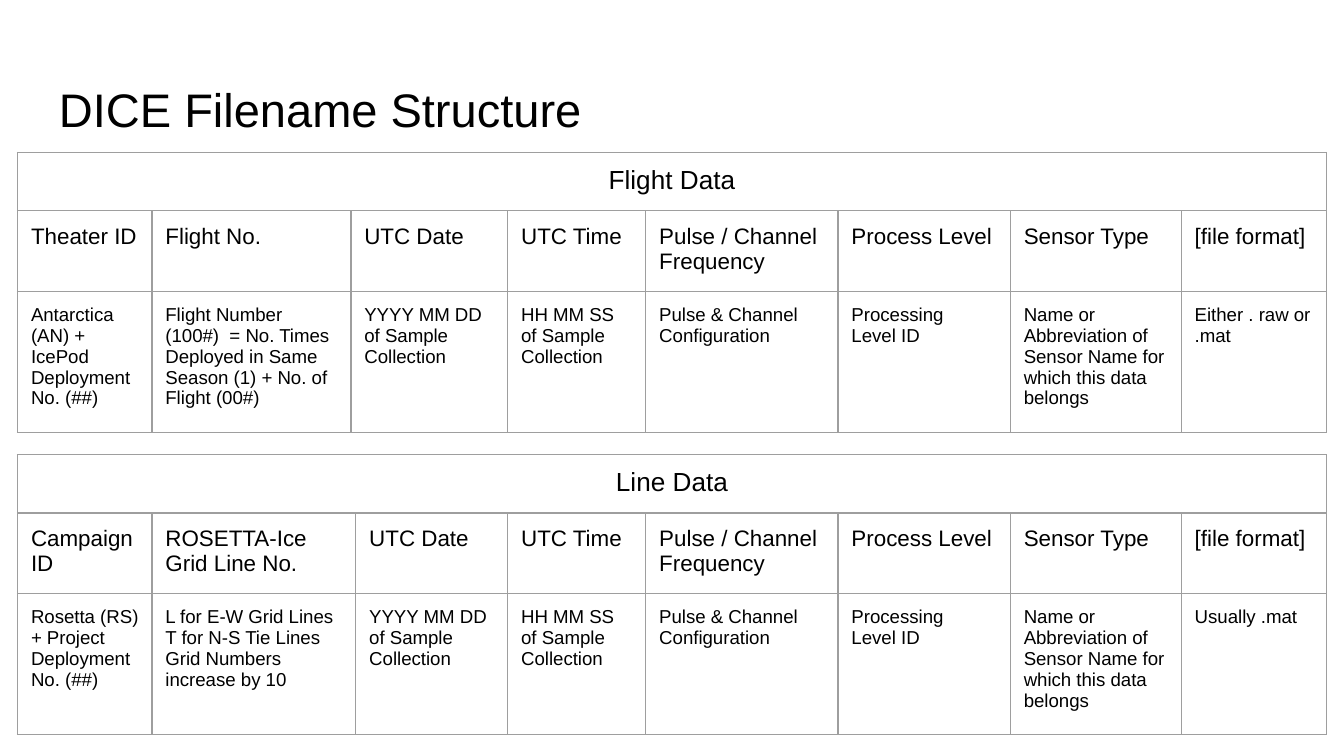
from dataclasses import dataclass

from lxml.etree import SubElement
from pptx import Presentation
from pptx.dml.color import RGBColor
from pptx.enum.text import MSO_ANCHOR, PP_ALIGN
from pptx.oxml.ns import qn
from pptx.util import Pt

FONT, INK, RULE = "Arial", "000000", "9E9E9E"
INSET = 7.2
TABLE_LEFT = 9.4
ROW_HEIGHTS = (30.5, 42.5, 75.5)
FIRST_WIDTH = 72
LAST_WIDTHS = (74, 103, 92.3, 91.6, 77.8)


@dataclass
class Field:
    name: str
    detail: str


@dataclass
class FileTable:
    title: str
    top: float
    number_width: float
    date_width: float
    fields: list[Field]


# Fields that both filename patterns share
UTC_DATE = Field("UTC Date", "YYYY MM DD of Sample Collection")
SHARED = [
    Field("UTC Time", "HH MM SS of Sample Collection"),
    Field("Pulse / Channel Frequency", "Pulse & Channel Configuration"),
    Field("Process Level", "Processing\nLevel ID"),
    Field("Sensor Type", "Name or Abbreviation of Sensor Name for which this data belongs"),
]

TABLES = [
    FileTable("Flight Data", 81.6, 106.6, 84, [
        Field("Theater ID", "Antarctica (AN) + IcePod Deployment No. (##)"),
        Field("Flight No.", "Flight Number (100#)  = No. Times Deployed in Same "
                            "Season (1) + No. of Flight (00#)"),
        UTC_DATE, *SHARED,
        Field("[file format]", "Either . raw or .mat"),
    ]),
    FileTable("Line Data", 243.6, 109.2, 81.4, [
        Field("Campaign ID", "Rosetta (RS) + Project Deployment No. (##)"),
        Field("ROSETTA-Ice Grid Line No.", "L for E-W Grid Lines\nT for N-S Tie Lines\n"
                                           "Grid Numbers increase by 10"),
        UTC_DATE, *SHARED,
        Field("[file format]", "Usually .mat"),
    ]),
]


def rgb(value: str) -> RGBColor:
    return RGBColor.from_string(value)


def write(tf, text: str, *, size: float, align=PP_ALIGN.LEFT, color: str = INK) -> None:
    tf.word_wrap = True
    tf.margin_left = tf.margin_right = tf.margin_top = tf.margin_bottom = Pt(INSET)
    for i, line in enumerate(text.split("\n")):
        p = tf.add_paragraph() if i else tf.paragraphs[0]
        p.alignment = align
        r = p.add_run()
        r.text = line
        r.font.name, r.font.size = FONT, Pt(size)
        r.font.color.rgb = rgb(color)


def style_cell(cell) -> None:
    tc_pr = cell._tc.get_or_add_tcPr()
    for side in ("lnL", "lnR", "lnT", "lnB"):
        ln = SubElement(tc_pr, qn(f"a:{side}"), w=str(Pt(0.75)))
        fill = SubElement(ln, qn("a:solidFill"))
        SubElement(fill, qn("a:srgbClr"), val=RULE)
    cell.fill.background()


def draw_table(s, spec_table: FileTable) -> None:
    widths = (FIRST_WIDTH, spec_table.number_width, spec_table.date_width, *LAST_WIDTHS)
    table = s.shapes.add_table(len(ROW_HEIGHTS), len(widths), Pt(TABLE_LEFT),
                               Pt(spec_table.top), Pt(sum(widths)),
                               Pt(sum(ROW_HEIGHTS))).table
    table.first_row = table.horz_banding = False
    for column, width in zip(table.columns, widths):
        column.width = Pt(width)
    for row, height in zip(table.rows, ROW_HEIGHTS):
        row.height = Pt(height)
    for cell in table.iter_cells():
        style_cell(cell)

    # Heading across all columns
    heading = table.cell(0, 0)
    heading.merge(table.cell(0, len(widths) - 1))
    write_cell(heading, spec_table.title, size=14, align=PP_ALIGN.CENTER)

    # Field names and what they hold
    for col, field in enumerate(spec_table.fields):
        write_cell(table.cell(1, col), field.name, size=12)
        write_cell(table.cell(2, col), field.detail, size=10)


def write_cell(cell, text: str, **fmt) -> None:
    write(cell.text_frame, text, **fmt)
    cell.margin_left = cell.margin_right = Pt(INSET)
    cell.margin_top = cell.margin_bottom = Pt(INSET)


def main() -> None:
    prs = Presentation()
    prs.slide_width, prs.slide_height = Pt(720), Pt(405)
    s = prs.slides.add_slide(prs.slide_layouts[6])

    # Title
    sp = s.shapes.add_textbox(Pt(24.5), Pt(35.3), Pt(671), Pt(45.4))
    write(sp.text_frame, "DICE Filename Structure", size=25.2)
    sp.text_frame.vertical_anchor = MSO_ANCHOR.BOTTOM

    # Filename tables
    for file_table in TABLES:
        draw_table(s, file_table)

    prs.save("out.pptx")


if __name__ == "__main__":
    main()
